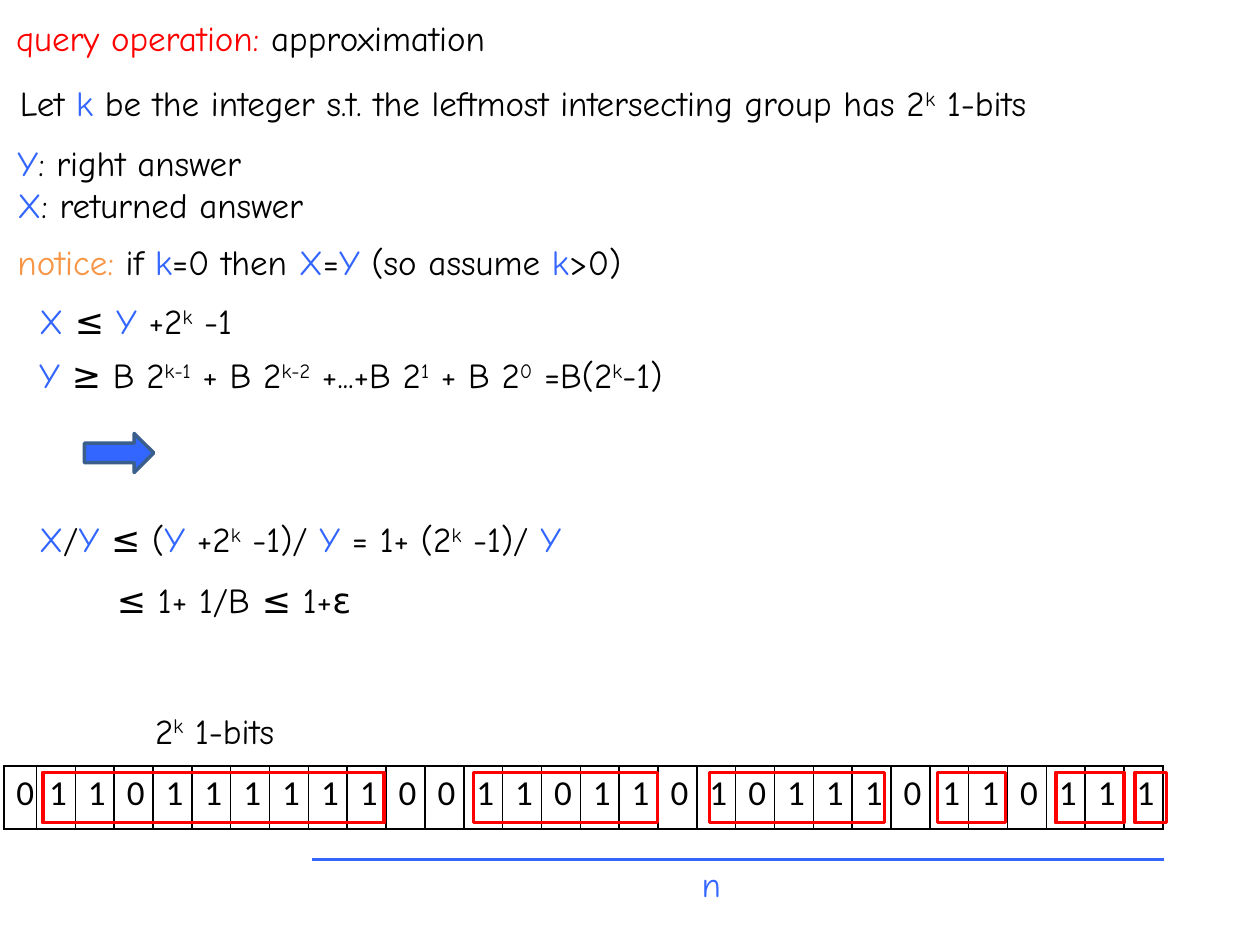
"""Build a slide on the error bound of an approximate query over bit groups."""
import pptx
import pptx.util
import pptx.dml.color
import pptx.enum.shapes
import pptx.enum.text
import pptx.oxml
import lxml.etree

hues = {"black": "000000", "red": "FF0000", "blue": "3366FF",
        "gold": "F79646", "navy": "3A5F8C"}
rgb = {name: pptx.dml.color.RGBColor.from_string(code)
       for name, code in hues.items()}
forms = pptx.enum.shapes.MSO_SHAPE

deck = pptx.Presentation()
deck.slide_width = pptx.util.Inches(10)
deck.slide_height = pptx.util.Inches(7.5)
page = deck.slides.add_slide(deck.slide_layouts[6])
unit = deck.slide_width / 100


def span(*cells):
    return [round(cell * unit) for cell in cells]


def write(para, text, hue="black", face="Comic Neue", high=False):
    run = para.add_run()
    run.text = text
    run.font.size = pptx.util.Pt(20)
    run.font.name = face
    run.font.color.rgb = rgb[hue]
    if high:
        run.font._element.set("baseline", "30000")


notes = [
    ((0.3, 0.8, 99.5, 4.4), [[("query operation: ", "red"), ("approximation",)]]),
    ((0.6, 6, 99.5, 4.4), [[
        ("Let ",), ("k", "blue"),
        (" be the integer s.t. the leftmost intersecting group has 2",),
        ("k", "up"), (" 1-bits",)]]),
    ((0.4, 10.7, 99.2, 7.7), [[("Y", "blue"), (": right answer",)],
                              [("X", "blue"), (": returned answer",)]]),
    ((0.4, 18.6, 92.9, 4.4), [[
        ("notice:", "gold"), (" if ",), ("k", "blue"), ("=0 then ",),
        ("X", "blue"), ("=",), ("Y", "blue"), (" (so assume ",),
        ("k", "blue"), (">0)",)]]),
    ((1.2, 23.3, 96.1, 4.4), [[
        (" ",), ("X ", "blue"), ("≤",), (" Y ", "blue"), ("+2",),
        ("k", "up"), (" -1",)]]),
    ((1.2, 27.6, 96.1, 4.4), [[
        (" ",), ("Y ", "blue"), ("≥ B 2",), ("k-1", "up"), (" + B 2",),
        ("k-2", "up"), (" +...+B 2",), ("1", "up"), (" + B 2",),
        ("0", "up"), (" =B(2",), ("k", "up"), ("-1)",)]]),
    ((1.2, 40.6, 96.1, 4.4), [[
        (" ",), ("X", "blue"), ("/",), ("Y ", "blue"), ("≤ (",),
        ("Y ", "blue"), ("+2",), ("k", "up"), (" -1)/",), (" Y", "blue"),
        (" = 1+ (2",), ("k", "up"), (" -1)/",), (" Y", "blue")]]),
    ((8.3, 45.4, 50.4, 4.4), [[("≤ 1+ 1/B ≤ 1+ε",)]]),
    ((10.4, 55.8, 14.6, 4.4), [[(" 2",), ("k", "up"), (" 1-bits",)]]),
    ((54.7, 68, 3.2, 4.4), [[("n", "blue")]]),
]
for place, lines in notes:
    frame = page.shapes.add_textbox(*span(*place)).text_frame
    frame.word_wrap = True
    frame.auto_size = pptx.enum.text.MSO_AUTO_SIZE.SHAPE_TO_FIT_TEXT
    for row, line in enumerate(lines):
        para = frame.add_paragraph() if row else frame.paragraphs[0]
        for text, *kind in line:
            if kind == ["up"]:
                write(para, text, high=True)
            else:
                write(para, text, *kind)

bits = "011011111100110110101110110111"
table = page.shapes.add_table(1, len(bits), *span(0.3, 60.8, 92.1, 5)).table
table.first_row = table.horz_banding = False
first = 2.6
rest = (92.1 - first) / (len(bits) - 1)
for spot, bit in enumerate(bits):
    table.columns[spot].width = span(rest if spot else first)[0]
    cell = table.cell(0, spot)
    write(cell.text_frame.paragraphs[0], bit, face="Calibri")
    props = cell._tc.get_or_add_tcPr()
    for side in ("lnL", "lnR", "lnT", "lnB"):
        edge = lxml.etree.SubElement(props, pptx.oxml.ns.qn("a:" + side), w="12700")
        fill = lxml.etree.SubElement(edge, pptx.oxml.ns.qn("a:solidFill"))
        lxml.etree.SubElement(fill, pptx.oxml.ns.qn("a:srgbClr"), val=hues["black"])
    cell.fill.background()

groups = [(3.4, 27.1), (37.6, 14.6), (56.3, 13.9), (74.4, 5.4), (83.8, 5.4),
          (90.1, 2.5)]
marks = [(forms.RECTANGLE, (left, 61.3, width, 4), None, "red")
         for left, width in groups]
marks.append((forms.RIGHT_ARROW, (6.7, 34.4, 5.5, 3.1), "blue", "navy"))
for form, place, fill, edge in marks:
    shape = page.shapes.add_shape(form, *span(*place))
    shape.shadow.inherit = False
    if fill:
        shape.fill.solid()
        shape.fill.fore_color.rgb = rgb[fill]
    else:
        shape.fill.background()
    shape.line.color.rgb = rgb[edge]
    shape.line.width = pptx.util.Pt(2)

rule = page.shapes.add_connector(pptx.enum.shapes.MSO_CONNECTOR.STRAIGHT,
                                 *span(24.8, 68.2, 92.4, 68.2))
rule.line.color.rgb = rgb["blue"]
rule.line.width = pptx.util.Pt(2)
lxml.etree.SubElement(rule._element.spPr, pptx.oxml.ns.qn("a:effectLst"))

deck.save("out.pptx")
